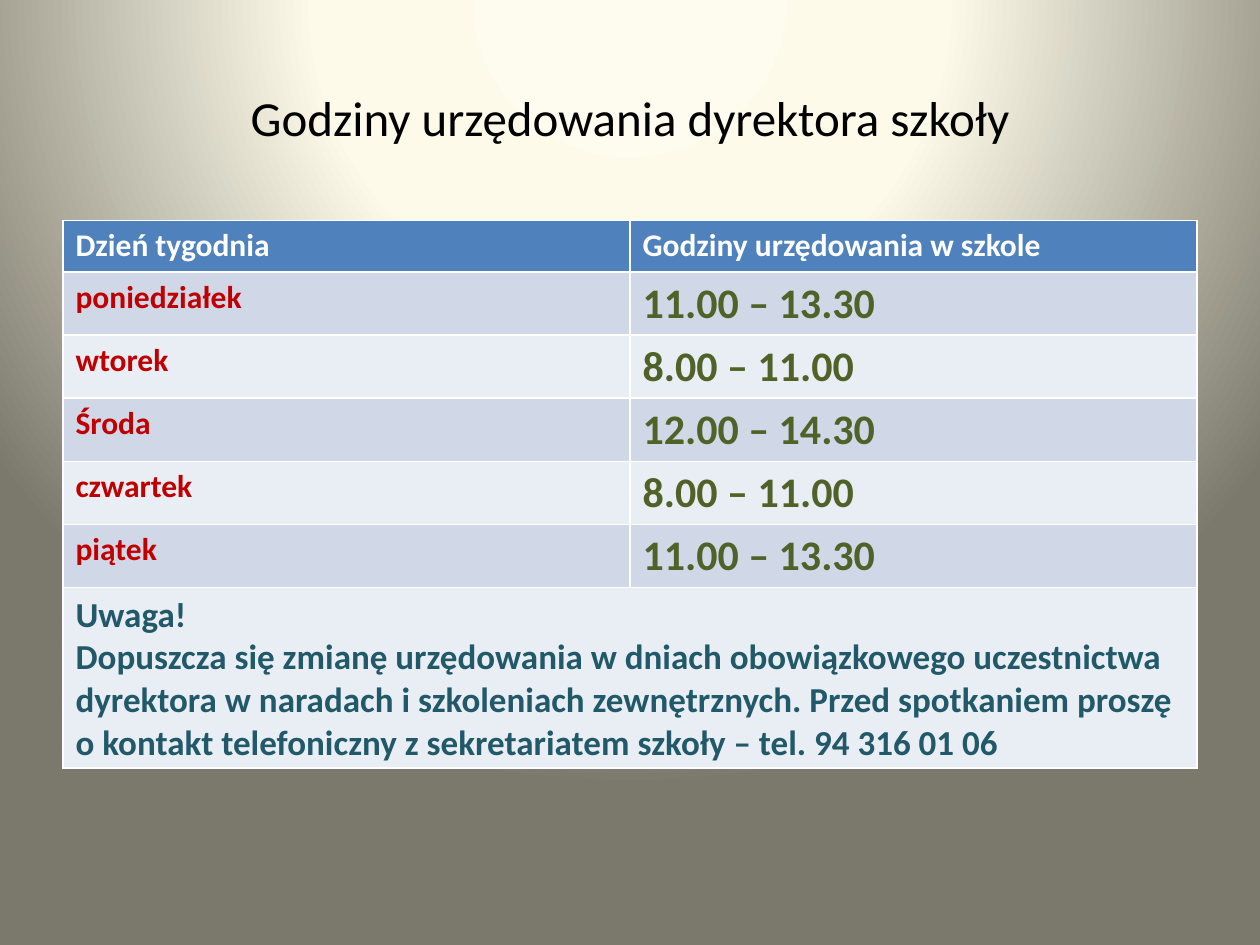
import dataclasses

import pptx
import pptx.dml.color
import pptx.enum.text
import pptx.oxml
import pptx.oxml.ns
import pptx.util
from pptx.dml.color import RGBColor
from pptx.util import Inches

BLACK = RGBColor(0x00, 0x00, 0x00)
WHITE = RGBColor(0xFF, 0xFF, 0xFF)
HEADER_BLUE = RGBColor(0x4F, 0x81, 0xBD)
BANDS = (RGBColor(0xD0, 0xD8, 0xE8), RGBColor(0xE9, 0xED, 0xF4))
DAY_RED = RGBColor(0xC0, 0x00, 0x00)
HOURS_GREEN = RGBColor(0x4F, 0x62, 0x28)
NOTICE_TEAL = RGBColor(0x21, 0x59, 0x68)
GLOW_STOPS = (
    (0, RGBColor(0xFE, 0xFC, 0xEE)),
    (40, RGBColor(0xFD, 0xFA, 0xEA)),
    (100, RGBColor(0x7B, 0x79, 0x6B)),
)


@dataclasses.dataclass(frozen=True)
class TextStyle:
    size: float
    color: RGBColor
    bold: bool = True


@dataclasses.dataclass(frozen=True)
class OfficeHours:
    day: str
    hours: str


TITLE_STYLE = TextStyle(28, BLACK, bold=False)
HEADER_STYLE = TextStyle(18, WHITE)
DAY_STYLE = TextStyle(18, DAY_RED)
HOURS_STYLE = TextStyle(24, HOURS_GREEN)
NOTICE_STYLE = TextStyle(20, NOTICE_TEAL)

HEADINGS = ("Dzień tygodnia", "Godziny urzędowania w szkole")
WEEK = (
    OfficeHours("poniedziałek", "11.00 – 13.30"),
    OfficeHours("wtorek", "8.00 – 11.00"),
    OfficeHours("Środa", "12.00 – 14.30"),
    OfficeHours("czwartek", "8.00 – 11.00"),
    OfficeHours("piątek", "11.00 – 13.30"),
)
NOTICE = (
    "Uwaga!\n"
    "Dopuszcza się zmianę urzędowania w dniach obowiązkowego uczestnictwa "
    "dyrektora w naradach i szkoleniach zewnętrznych. Przed spotkaniem proszę "
    "o kontakt telefoniczny z sekretariatem szkoły – tel. 94 316 01 06"
)


def write_text(frame: pptx.text.text.TextFrame, text: str, style: TextStyle) -> None:
    frame.text = text
    font_values = {"name": "Calibri", "size": pptx.util.Pt(style.size), "bold": style.bold}
    for paragraph in frame.paragraphs:
        for run in paragraph.runs:
            for attribute, value in font_values.items():
                setattr(run.font, attribute, value)
            run.font.color.rgb = style.color


def fill_cell(cell: pptx.table._Cell, text: str, style: TextStyle, fill: RGBColor) -> None:
    write_text(cell.text_frame, text, style)
    cell.fill.solid()
    cell.fill.fore_color.rgb = fill


def add_glow_background(slide: pptx.slide.Slide) -> None:
    """Give the slide a circular gradient centred above its top edge."""
    stops = "".join(
        f'<a:gs pos="{percent * 1000}"><a:srgbClr val="{color}"/></a:gs>'
        for percent, color in GLOW_STOPS
    )
    background = pptx.oxml.parse_xml(
        f'<p:bg {pptx.oxml.ns.nsdecls("p", "a")}><p:bgPr><a:gradFill rotWithShape="1">'
        f"<a:gsLst>{stops}</a:gsLst>"
        '<a:path path="circle"><a:fillToRect l="50000" t="-80000" r="50000" b="180000"/></a:path>'
        "</a:gradFill><a:effectLst/></p:bgPr></p:bg>"
    )
    slide.element.cSld.insert(0, background)


def add_title(slide: pptx.slide.Slide) -> None:
    title = slide.shapes.add_textbox(Inches(0.5), Inches(0.3), Inches(9), Inches(1.25))
    frame_values = {"word_wrap": True, "vertical_anchor": pptx.enum.text.MSO_ANCHOR.MIDDLE}
    for attribute, value in frame_values.items():
        setattr(title.text_frame, attribute, value)
    write_text(title.text_frame, "Godziny urzędowania dyrektora szkoły", TITLE_STYLE)
    title.text_frame.paragraphs[0].alignment = pptx.enum.text.PP_ALIGN.CENTER


def add_timetable(slide: pptx.slide.Slide) -> None:
    """Add the weekly hours, with the notice merged across the last row.

    White cell borders come from the default table style.
    """
    row_heights = [0.41] + [0.5] * len(WEEK) + [1.43]
    timetable = slide.shapes.add_table(
        len(row_heights), len(HEADINGS),
        Inches(0.5), Inches(1.75), Inches(9), Inches(sum(row_heights)),
    ).table
    for row, height in zip(timetable.rows, row_heights):
        row.height = Inches(height)

    for column, heading in enumerate(HEADINGS):
        fill_cell(timetable.cell(0, column), heading, HEADER_STYLE, HEADER_BLUE)
    for index, entry in enumerate(WEEK):
        band = BANDS[index % 2]
        fill_cell(timetable.cell(index + 1, 0), entry.day, DAY_STYLE, band)
        fill_cell(timetable.cell(index + 1, 1), entry.hours, HOURS_STYLE, band)

    last_row = len(row_heights) - 1
    notice_cell = timetable.cell(last_row, 0)
    notice_cell.merge(timetable.cell(last_row, 1))
    fill_cell(notice_cell, NOTICE, NOTICE_STYLE, BANDS[len(WEEK) % 2])


def main() -> None:
    presentation = pptx.Presentation()
    presentation.slide_width = Inches(10)
    presentation.slide_height = Inches(7.5)
    slide = presentation.slides.add_slide(presentation.slide_layouts[6])
    add_glow_background(slide)
    add_title(slide)
    add_timetable(slide)
    presentation.save("out.pptx")


if __name__ == "__main__":
    main()
